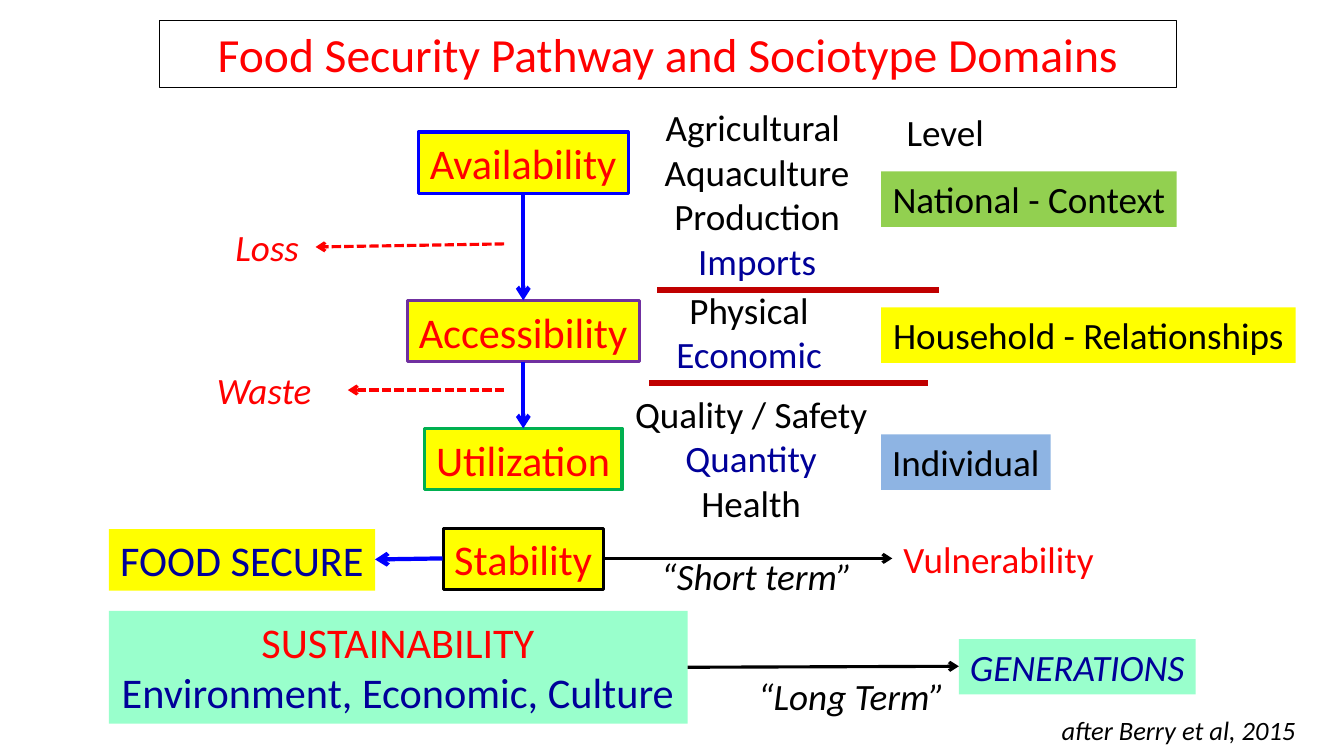
from lxml.etree import SubElement
from pptx import Presentation
from pptx.dml.color import RGBColor
from pptx.enum.dml import MSO_LINE
from pptx.enum.shapes import MSO_CONNECTOR, MSO_SHAPE
from pptx.enum.text import MSO_ANCHOR, MSO_AUTO_SIZE, PP_ALIGN
from pptx.oxml.ns import qn
from pptx.util import Inches, Pt

BLACK = RGBColor(0x00, 0x00, 0x00)
RED = RGBColor(0xFF, 0x00, 0x00)
DARK_RED = RGBColor(0xC0, 0x00, 0x00)
BLUE = RGBColor(0x00, 0x00, 0xFF)
NAVY = RGBColor(0x00, 0x00, 0x99)
LIGHT_BLUE = RGBColor(0x8E, 0xB4, 0xE3)
YELLOW = RGBColor(0xFF, 0xFF, 0x00)
GREEN = RGBColor(0x00, 0xB0, 0x50)
LIME = RGBColor(0x92, 0xD0, 0x50)
MINT = RGBColor(0x99, 0xFF, 0xCC)
PURPLE = RGBColor(0x70, 0x30, 0xA0)

FONT = "Calibri"
TITLE_SIZE, LARGE, MEDIUM, SMALL = 34, 30.2, 26.5, 18.9
BOX_HEIGHT, LABEL_HEIGHT = 0.61, 0.55
PATHWAY_CENTER, LEVEL_LEFT = 5.19, 8.74


def write_lines(shape, lines, size, italic=False, align=PP_ALIGN.CENTER,
                anchor=MSO_ANCHOR.TOP, wrap=False):
    frame = shape.text_frame
    frame_format = {"word_wrap": wrap, "auto_size": MSO_AUTO_SIZE.NONE,
                    "vertical_anchor": anchor}
    for name, value in frame_format.items():
        setattr(frame, name, value)
    for index, (words, color) in enumerate(lines):
        para = frame.add_paragraph() if index else frame.paragraphs[0]
        para.alignment = align
        span = para.add_run()
        span.text = words
        font_format = {"name": FONT, "size": Pt(size), "italic": italic}
        for name, value in font_format.items():
            setattr(span.font, name, value)
        span.font.color.rgb = color


def add_title(page, words, place):
    title = page.shapes.title
    for name, value in zip(("left", "top", "width", "height"), place):
        setattr(title, name, Inches(value))
    title.line.color.rgb = BLACK
    title.line.width = Pt(0.75)
    write_lines(title, [(words, RED)], TITLE_SIZE, wrap=True)


def add_box(page, place, fill, lines, size, outline=None, **text_format):
    box = page.shapes.add_shape(MSO_SHAPE.RECTANGLE, *map(Inches, place))
    box.shadow.inherit = False
    box.fill.solid()
    box.fill.fore_color.rgb = fill
    if outline is None:
        box.line.fill.background()
    else:
        box.line.color.rgb = outline
        box.line.width = Pt(2.25)
    write_lines(box, lines, size, **text_format)


def add_label(page, place, lines, size=MEDIUM, **text_format):
    label = page.shapes.add_textbox(*map(Inches, place))
    write_lines(label, lines, size, **text_format)


def add_line(page, start, end, color, width, arrow=True, dashed=False):
    line = page.shapes.add_connector(
        MSO_CONNECTOR.STRAIGHT, *map(Inches, (*start, *end)))
    line.line.color.rgb = color
    line.line.width = Pt(width)
    if dashed:
        line.line.dash_style = MSO_LINE.SQUARE_DOT
    properties = line._element.spPr
    if arrow:
        SubElement(properties.find(qn("a:ln")), qn("a:tailEnd"), type="arrow")
    SubElement(properties, qn("a:effectLst"))


def add_pathway(page):
    stages = [("Availability", 1.31, 2.08, BLUE),
              ("Accessibility", 2.98, 2.3, PURPLE),
              ("Utilization", 4.25, 1.96, GREEN),
              ("Stability", 5.24, 1.59, BLACK)]
    for words, top, width, outline in stages:
        add_box(page, (PATHWAY_CENTER - width / 2, top, width, BOX_HEIGHT),
                YELLOW, [(words, RED)], LARGE, outline, anchor=MSO_ANCHOR.MIDDLE)
    for upper, lower in zip(stages[:2], stages[1:3]):
        add_line(page, (PATHWAY_CENTER, upper[1] + BOX_HEIGHT),
                 (PATHWAY_CENTER, lower[1]), BLUE, 3)

    losses = [("Loss", (2.16, 2.18, 0.98), 2.42, (3.13, 2.45)),
              ("Waste", (1.79, 3.6, 1.66), 3.87, (3.45, 3.87))]
    for words, place, start_top, end in losses:
        add_label(page, (*place, LABEL_HEIGHT), [(words, RED)], italic=True)
        add_line(page, (5, start_top), end, RED, 2.25, dashed=True)


def add_components(page):
    groups = [((6.31, 0.99, 2.4, 1.88),
               [("Agricultural ", BLACK), ("Aquaculture", BLACK),
                ("Production", BLACK), ("Imports", NAVY)]),
              ((6.6, 2.8, 1.66, 0.99), [("Physical", BLACK), ("Economic", NAVY)]),
              ((6.19, 3.83, 2.52, 1.44),
               [("Quality / Safety", BLACK), ("Quantity", NAVY),
                ("Health", BLACK)])]
    for place, lines in groups:
        add_label(page, place, lines)
    for left, right, top in [(6.52, 9.31, 2.88), (6.44, 9.2, 3.8)]:
        add_line(page, (left, top), (right, top), DARK_RED, 4.5, arrow=False)


def add_levels(page):
    add_label(page, (8.82, 1.04, 1.11, LABEL_HEIGHT), [("Level", BLACK)])
    levels = [("National - Context", 1.7, 2.93, LIME),
              ("Household - Relationships", 3.05, 4.11, YELLOW),
              ("Individual", 4.31, 1.68, LIGHT_BLUE)]
    for words, top, width, fill in levels:
        add_box(page, (LEVEL_LEFT, top, width, LABEL_HEIGHT), fill,
                [(words, BLACK)], MEDIUM)


def add_outcomes(page):
    add_box(page, (1.08, 5.25, 2.64, BOX_HEIGHT), YELLOW,
            [("FOOD SECURE", NAVY)], LARGE)
    add_box(page, (1.08, 6.06, 5.74, 1.12), MINT,
            [("SUSTAINABILITY", RED), ("Environment, Economic, Culture", NAVY)],
            LARGE)
    add_box(page, (9.51, 6.34, 2.35, LABEL_HEIGHT), MINT,
            [("GENERATIONS", NAVY)], MEDIUM, italic=True)
    add_label(page, (8.85, 5.27, 2.11, LABEL_HEIGHT), [("Vulnerability", RED)])
    add_line(page, (4.39, 5.54), (3.72, 5.55), BLUE, 3)
    add_line(page, (5.98, 5.54), (8.85, 5.54), BLACK, 2.25)
    add_line(page, (6.82, 6.62), (9.51, 6.61), BLACK, 2.25)

    notes = [("“Short term”", (6.46, 5.44, 2.12, LABEL_HEIGHT), MEDIUM),
             ("“Long Term”", (7.42, 6.63, 2.08, LABEL_HEIGHT), MEDIUM),
             ("after Berry et al, 2015", (10.43, 7.03, 2.55, 0.42), SMALL)]
    for words, place, size in notes:
        add_label(page, place, [(words, BLACK)], size, italic=True,
                  align=PP_ALIGN.LEFT, wrap=True)


def main():
    deck = Presentation()
    deck.slide_width, deck.slide_height = Inches(13.33), Inches(7.5)
    page = deck.slides.add_slide(deck.slide_layouts.get_by_name("Title Only"))
    add_title(page, "Food Security Pathway and Sociotype Domains",
              (1.58, 0.2, 10.09, 0.67))
    add_pathway(page)
    add_components(page)
    add_levels(page)
    add_outcomes(page)
    deck.save("out.pptx")


if __name__ == "__main__":
    main()
